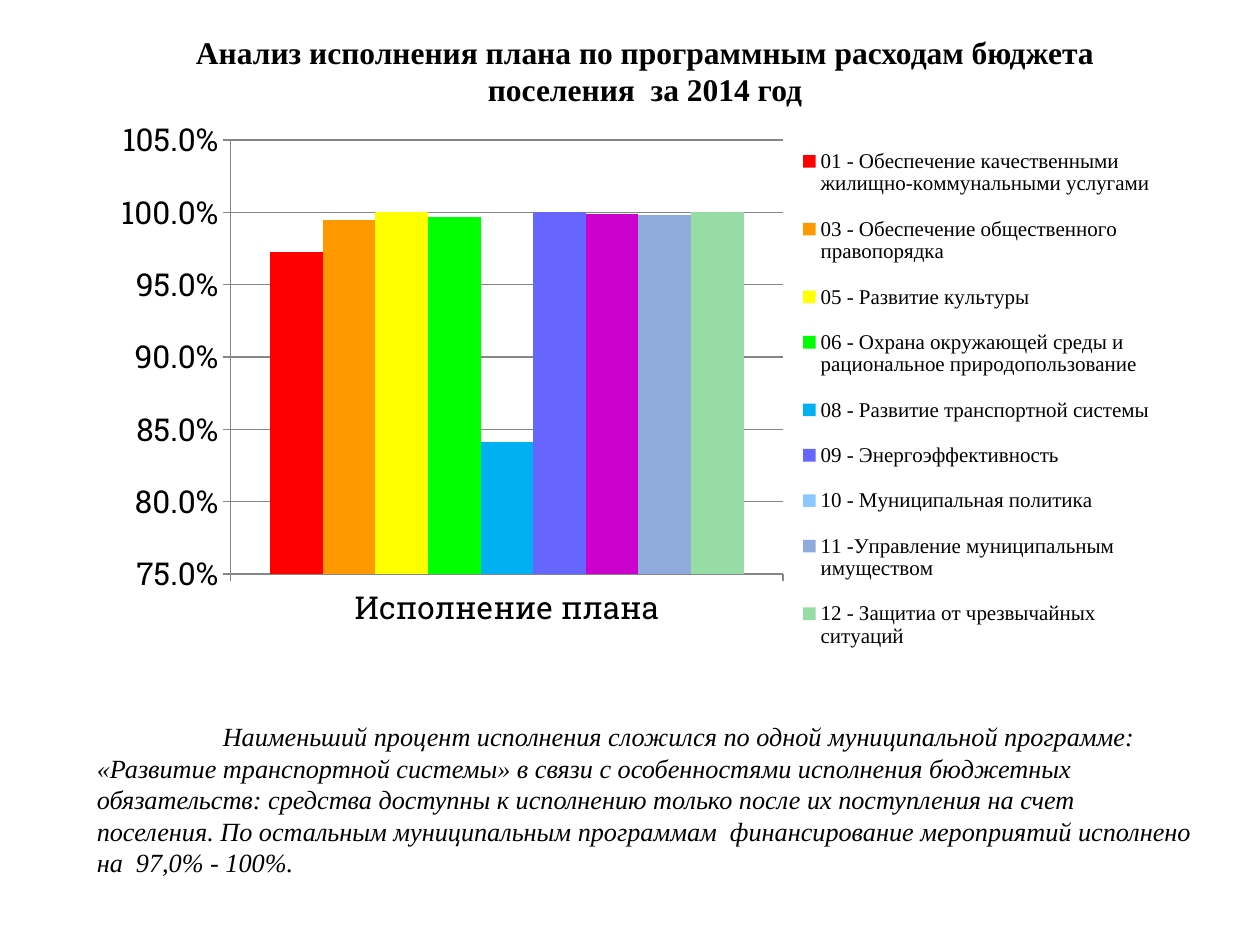
from lxml.etree import SubElement
from pptx import Presentation
from pptx.chart.data import CategoryChartData as Data
from pptx.dml.color import RGBColor
from pptx.enum.chart import XL_CHART_TYPE as Kind, XL_LEGEND_POSITION as Side, XL_TICK_MARK as Tick
from pptx.enum.text import MSO_ANCHOR as Anchor, PP_ALIGN as Align
from pptx.oxml.ns import qn
from pptx.util import Inches, Pt

SERIF, SLAB = "Times New Roman", "Roboto Slab"
TITLE = "Анализ исполнения плана по программным расходам бюджета поселения  за 2014 год"
NOTE = (
    "Наименьший процент исполнения сложился по одной муниципальной программе: "
    "«Развитие транспортной системы» в связи с особенностями исполнения бюджетных "
    "обязательств: средства доступны к исполнению только после их поступления на счет "
    "поселения. По остальным муниципальным программам  финансирование мероприятий "
    "исполнено на  97,0% - 100%."
)
PLANS = [
    ("01 - Обеспечение качественными жилищно-коммунальными услугами", 0.973, "FF0000"),
    ("03 - Обеспечение общественного правопорядка", 0.995, "FF9900"),
    ("05 - Развитие культуры", 1, "FFFF00"),
    ("06 - Охрана окружающей среды и рациональное природопользование", 0.997, "00FF00"),
    ("08 - Развитие транспортной системы", 0.841, "00B0F0"),
    ("09 - Энергоэффективность", 1, "6666FF"),
    ("10 - Муниципальная политика", 0.999, "8CC8FF"),
    ("11 -Управление муниципальным имуществом", 0.998, "8FAADC"),
    ("12 - Защитиа от чрезвычайных ситуаций", 1, "98DCA5"),
]
POINTS = {6: "CC00CC"}
SCALE = {"minimum_scale": 0.75, "maximum_scale": 1.05, "major_unit": 0.05,
         "has_major_gridlines": True}
LABELS = {"number_format": "0.0%", "number_format_is_linked": False}


def put(item, vals):
    for key, val in vals.items():
        setattr(item, key, val)


def tint(item, code):
    item.rgb = RGBColor.from_string(code)


def paint(fill, code):
    fill.solid()
    tint(fill.fore_color, code)


def style(font, size, name, **more):
    put(font, {"size": Pt(size), "name": name, **more})
    tint(font.color, "000000")


def write(slide, box, text, size, anchor, align, **more):
    frame = slide.shapes.add_textbox(*map(Inches, box)).text_frame
    put(frame, {"word_wrap": True, "vertical_anchor": anchor})
    para = frame.paragraphs[0]
    para.alignment = align
    run = para.add_run()
    run.text = text
    style(run.font, size, SERIF, **more)
    return para


def place(part, spot, box, inner=False):
    for old in part.findall(qn("c:layout")):
        part.remove(old)
    lay = SubElement(part, qn("c:layout"))
    part.insert(spot, lay)
    man = SubElement(lay, qn("c:manualLayout"))
    marks = [("layoutTarget", "inner")] if inner else []
    marks += [("xMode", "edge"), ("yMode", "edge"), *zip("xywh", box)]
    for tag, val in marks:
        SubElement(man, qn("c:" + tag)).set("val", str(val))


def draw(slide):
    data = Data(number_format="0.0%")
    data.categories = ["Исполнение плана"]
    for name, val, _ in PLANS:
        data.add_series(name, [val])
    box = map(Inches, (0.65, 0.92, 8.82, 4.49))
    chart = slide.shapes.add_chart(Kind.COLUMN_CLUSTERED, *box, data).chart
    put(chart, {"has_title": False, "has_legend": True})
    style(chart.font, 18, SLAB)
    plot = chart.plots[0]
    put(plot, {"gap_width": 150, "overlap": 0, "vary_by_categories": False})
    for num, (bar, row) in enumerate(zip(plot.series, PLANS)):
        bar.invert_if_negative = False
        paint(bar.format.fill, row[2])
        if num in POINTS:
            paint(bar.points[0].format.fill, POINTS[num])
    rise = chart.value_axis
    put(rise, SCALE)
    put(rise.tick_labels, LABELS)
    for axis in (rise, chart.category_axis):
        put(axis, {"major_tick_mark": Tick.OUTSIDE, "minor_tick_mark": Tick.NONE})
    for part in (rise, chart.category_axis, rise.major_gridlines):
        tint(part.format.line.color, "868686")
        part.format.line.width = Pt(0.75)
    key = chart.legend
    put(key, {"position": Side.RIGHT, "include_in_layout": False})
    style(key.font, 12, SERIF)
    root = chart.element
    place(root.find(".//" + qn("c:plotArea")), 0, (0.134, 0.043, 0.497, 0.767), True)
    place(root.find(".//" + qn("c:legend")), 1, (0.64, 0.02, 0.33, 0.96))


def main():
    deck = Presentation()
    put(deck, {"slide_width": Inches(10), "slide_height": Inches(7.5)})
    slide = deck.slides.add_slide(deck.slide_layouts[6])
    write(slide, (1.3, 0.21, 7.64, 0.71), TITLE, 18, Anchor.TOP, Align.CENTER, bold=True)
    note = write(slide, (0.67, 5.63, 8.94, 1.43), NOTE, 15, Anchor.MIDDLE, Align.LEFT,
                 italic=True)
    note._p.get_or_add_pPr().set("indent", str(Inches(1)))
    draw(slide)
    deck.save("out.pptx")


if __name__ == "__main__":
    main()
